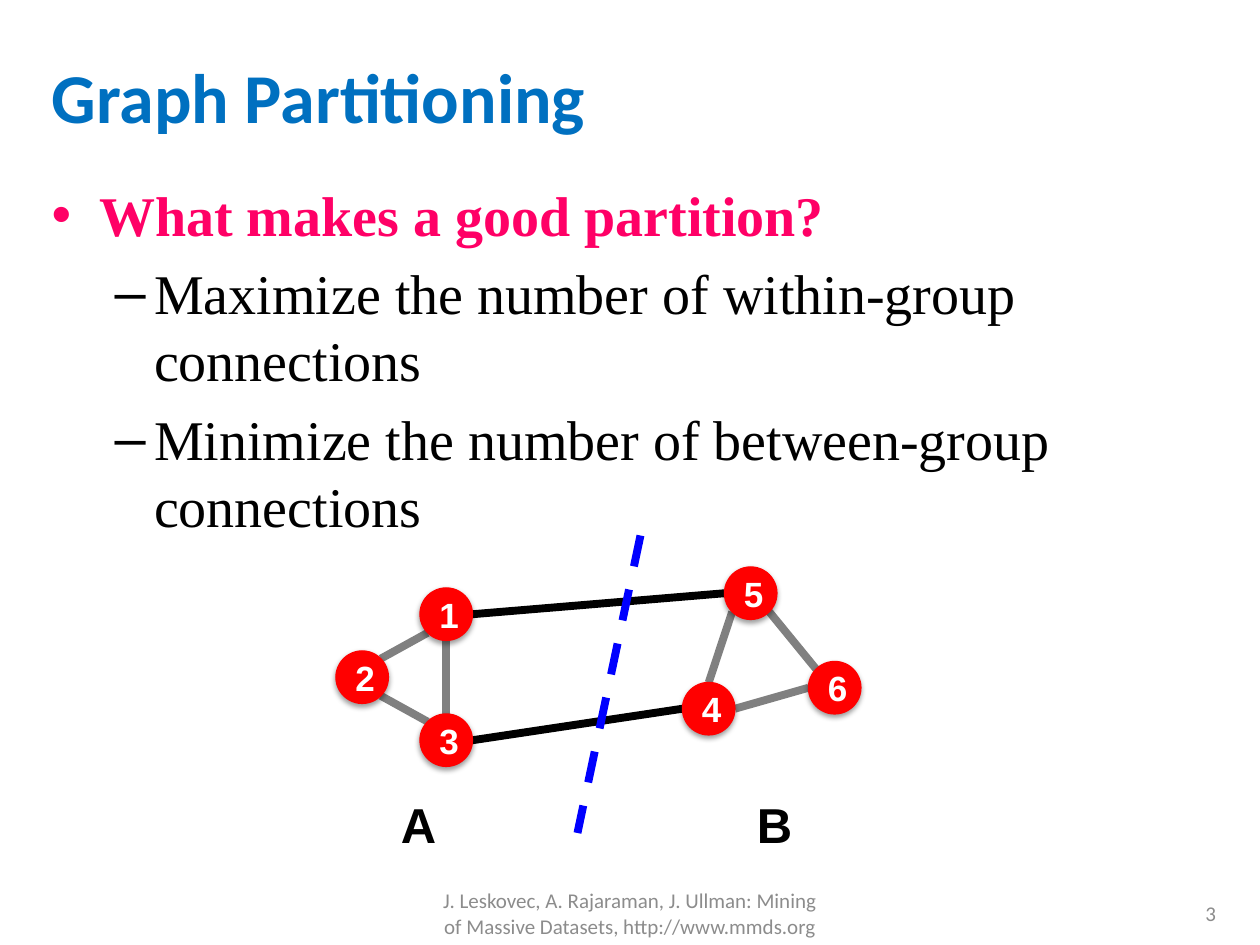
from dataclasses import dataclass
from math import cos, radians, sin

from lxml import etree
from pptx import Presentation
from pptx import util as u
from pptx.dml.color import RGBColor
from pptx.enum import dml, shapes, text
from pptx.oxml import ns


@dataclass(frozen=True)
class Theme:
    title: str = "0070C0"
    question: str = "FF0066"
    ink: str = "000000"
    muted: str = "8C8C8C"
    node: str = "FF0000"
    node_text: str = "FFFFFF"
    within: str = "808080"
    cut: str = "0000FF"
    heading_font: str = "Calibri"
    body_font: str = "Times New Roman"
    graph_font: str = "Arial"
    title_size: int = 40
    body_size: int = 32
    group_size: int = 28
    node_size: int = 20
    footer_size: int = 12


THEME = Theme()
NODE = 30  # node diameter
STROKE = 4.5

# Top left corner of each node
NODES = {
    "1": (240, 336), "3": (240, 408), "2": (192, 372),
    "5": (414, 324), "4": (390, 390), "6": (462, 378),
}

# Direction of each attachment point, in degrees clockwise from the right
SITES = {"E": 0, "SE": 45, "S": 90, "SW": 135, "W": 180, "NW": 225, "N": 270, "NE": 315}

# Start node and side, end node and side, colour
EDGES = [
    ("1", "SW", "2", "NE", THEME.within),
    ("2", "SE", "3", "NW", THEME.within),
    ("1", "S", "3", "N", THEME.within),
    ("1", "E", "5", "W", THEME.ink),
    ("3", "E", "4", "W", THEME.ink),
    ("5", "SE", "6", "NW", THEME.within),
    ("4", "E", "6", "W", THEME.within),
    ("5", "SW", "4", "N", THEME.within),
]

# Wording, left indent, hanging indent, bullet, colour, bold
POINTS = [
    ("What makes a good partition?", 27, 27, "•", THEME.question, True),
    ("Maximize the number of within-group \vconnections", 58.5, 22.5, "–", THEME.ink, False),
    ("Minimize the number of between-group connections", 58.5, 22.5, "–", THEME.ink, False),
]


def style(paragraph, font, size, colour, bold=False, align=text.PP_ALIGN.LEFT):
    paragraph.alignment = align
    paragraph.font.name = font
    paragraph.font.size = u.Pt(size)
    paragraph.font.bold = bold
    paragraph.font.color.rgb = RGBColor.from_string(colour)


def add_frame(slide, box, anchor=text.MSO_ANCHOR.TOP, wrap=True):
    frame = slide.shapes.add_textbox(*map(u.Pt, box)).text_frame
    frame.word_wrap = wrap
    frame.vertical_anchor = anchor
    return frame


def add_label(slide, box, wording, *look, anchor=text.MSO_ANCHOR.MIDDLE, wrap=True, **options):
    label = add_frame(slide, box, anchor, wrap).paragraphs[0]
    label.text = wording
    style(label, *look, **options)


def add_bullet(paragraph, left, hanging, mark):
    properties = paragraph._p.get_or_add_pPr()
    properties.set("marL", str(u.Pt(left)))
    properties.set("indent", str(-u.Pt(hanging)))
    etree.SubElement(properties, ns.qn("a:buFont"), typeface="Arial")
    etree.SubElement(properties, ns.qn("a:buChar"), char=mark)


def add_points(slide, box, points):
    frame = add_frame(slide, box)
    for index, (wording, left, hanging, mark, colour, bold) in enumerate(points):
        point = frame.add_paragraph() if index else frame.paragraphs[0]
        point.text = wording
        point.space_before = u.Pt(0.2 * THEME.body_size)
        add_bullet(point, left, hanging, mark)
        style(point, THEME.body_font, THEME.body_size, colour, bold)
        # Line breaks do not take the paragraph font in every reader
        for run in point.runs:
            run.font.size = point.font.size


def add_line(slide, start, end, colour):
    line = slide.shapes.add_connector(
        shapes.MSO_CONNECTOR.STRAIGHT, *map(u.Pt, (*start, *end)))
    line.line.color.rgb = RGBColor.from_string(colour)
    line.line.width = u.Pt(STROKE)
    etree.SubElement(line._element.spPr, ns.qn("a:effectLst"))
    return line


def site(name, side):
    left, top = NODES[name]
    angle, radius = radians(SITES[side]), NODE / 2
    return left + radius * (1 + cos(angle)), top + radius * (1 + sin(angle))


def add_shadow(shape):
    shape.shadow.inherit = False
    effects = shape._element.spPr.find(ns.qn("a:effectLst"))
    shadow = etree.SubElement(
        effects, ns.qn("a:outerShdw"), blurRad=str(u.Pt(3.1)), dist=str(u.Pt(1.6)),
        dir="5400000", rotWithShape="0")
    black = etree.SubElement(shadow, ns.qn("a:srgbClr"), val=THEME.ink)
    etree.SubElement(black, ns.qn("a:alpha"), val="38000")


def add_node(slide, name, corner):
    node = slide.shapes.add_shape(
        shapes.MSO_SHAPE.OVAL, *map(u.Pt, (*corner, NODE, NODE)))
    node.fill.solid()
    node.fill.fore_color.rgb = RGBColor.from_string(THEME.node)
    node.line.color.rgb = RGBColor.from_string(THEME.node)
    node.line.width = u.Pt(0.75)
    add_shadow(node)
    frame = node.text_frame
    frame.word_wrap = False
    frame.vertical_anchor = text.MSO_ANCHOR.MIDDLE
    frame.margin_left, frame.margin_right = u.Pt(3.4), 0
    number = frame.paragraphs[0]
    number.text = name
    style(number, THEME.graph_font, THEME.node_size, THEME.node_text, True,
          text.PP_ALIGN.CENTER)


def main():
    deck = Presentation()
    deck.slide_width, deck.slide_height = u.Pt(720), u.Pt(540)
    slide = deck.slides.add_slide(deck.slide_layouts[6])

    # Title and points
    add_label(slide, (22.5, 23, 681, 63.5), "Graph Partitioning",
              THEME.heading_font, THEME.title_size, THEME.title, True)
    add_points(slide, (22.5, 99.5, 681, 402), POINTS)

    # Footer and page number
    footer_look = THEME.heading_font, THEME.footer_size, THEME.muted
    add_label(slide, (246, 507.5, 228, 28.75),
              "J. Leskovec, A. Rajaraman, J. Ullman: Mining of Massive Datasets, "
              "http://www.mmds.org", *footer_look, align=text.PP_ALIGN.CENTER)
    add_label(slide, (534, 507.5, 168, 28.75), "3", *footer_look,
              align=text.PP_ALIGN.RIGHT)

    # Graph: edges beneath nodes, then the dashed cut
    for start, start_side, end, end_side, colour in EDGES:
        add_line(slide, site(start, start_side), site(end, end_side), colour)
    for name, corner in NODES.items():
        add_node(slide, name, corner)
    cut = add_line(slide, (366, 306), (330, 476), THEME.cut)
    cut.line.dash_style = dml.MSO_LINE.DASH

    # Group names
    for group, left in (("A", 222), ("B", 425.5)):
        add_label(slide, (left, 450.75, 35.25, 41), group, THEME.graph_font,
                  THEME.group_size, THEME.ink, True,
                  anchor=text.MSO_ANCHOR.TOP, wrap=False)

    deck.save("out.pptx")


if __name__ == "__main__":
    main()
